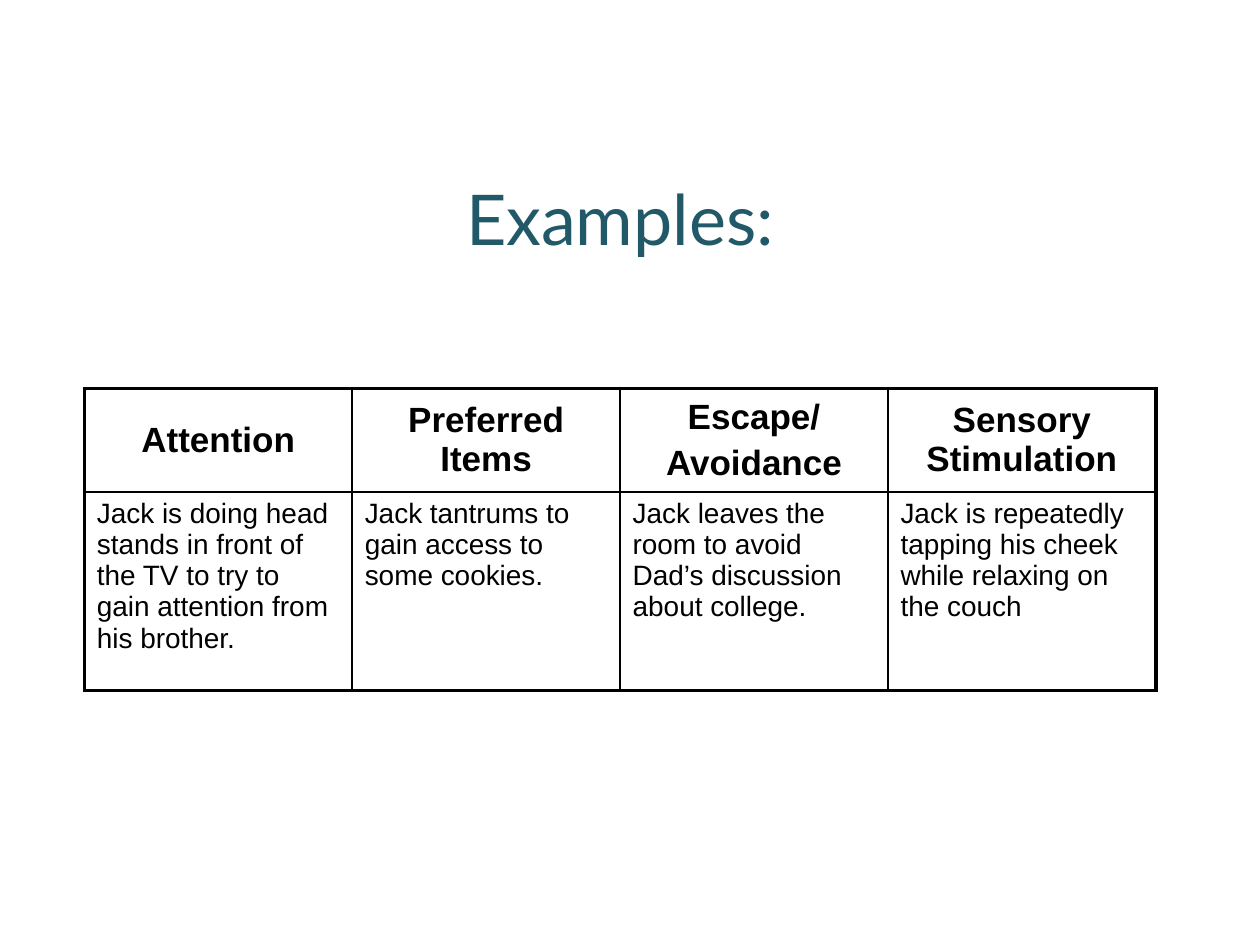
from lxml import etree
from pptx import Presentation
from pptx.dml.color import RGBColor
from pptx.enum.text import MSO_ANCHOR as ANCHOR, PP_ALIGN as ALIGN
from pptx.oxml.ns import qn
from pptx.util import Cm, Pt

INK = "000000"
TEAL = "215968"
THICK, THIN = 2.25, 1
HEADER_HEIGHT, BODY_HEIGHT = 1.95, 4
EXAMPLES = [
    ("Attention", "Jack is doing head stands in front of the TV to try to gain attention from his brother."),
    ("Preferred Items", "Jack tantrums to gain access to some cookies."),
    ("Escape/\nAvoidance", "Jack leaves the room to avoid Dad’s discussion about college."),
    ("Sensory Stimulation", "Jack is repeatedly tapping his cheek while relaxing on the couch"),
]


def color(value):
    return RGBColor.from_string(value)


def write(tf, text, size=16, font="Arial", fill=INK, bold=False, align=ALIGN.LEFT, gap=0):
    tf.word_wrap = True
    for i, line in enumerate(text.split("\n")):
        p = tf.paragraphs[0] if i == 0 else tf.add_paragraph()
        p.alignment = align
        if i:
            p.space_before = Pt(gap)
        r = p.add_run()
        r.text = line
        r.font.name = font
        r.font.size = Pt(size)
        r.font.bold = bold
        r.font.color.rgb = color(fill)


def set_borders(cell, widths):
    props = cell._tc.get_or_add_tcPr()
    for i, (side, width) in enumerate(zip("LRTB", widths)):
        ln = etree.Element(qn(f"a:ln{side}"), w=str(Pt(width)))
        solid = etree.SubElement(ln, qn("a:solidFill"))
        etree.SubElement(solid, qn("a:srgbClr"), val=INK)
        props.insert(i, ln)


def add_title(s, left, top, width, height):
    tf = s.shapes.add_textbox(Cm(left), Cm(top), Cm(width), Cm(height)).text_frame
    tf.vertical_anchor = ANCHOR.MIDDLE
    write(tf, "Examples:", size=40, font="Lato", fill=TEAL, align=ALIGN.CENTER)


def add_examples(s, left, top, width):
    count = len(EXAMPLES)
    height = HEADER_HEIGHT + BODY_HEIGHT
    table = s.shapes.add_table(2, count, Cm(left), Cm(top), Cm(width), Cm(height)).table
    table.horz_banding = False
    table.rows[0].height = Cm(HEADER_HEIGHT)
    table.rows[1].height = Cm(BODY_HEIGHT)
    for col, texts in enumerate(EXAMPLES):
        table.columns[col].width = Cm(width / count)
        for row, text in enumerate(texts):
            cell = table.cell(row, col)
            header = row == 0
            cell.fill.background()
            outer = (col == 0, col == count - 1, header, not header)
            set_borders(cell, [THICK if edge else THIN for edge in outer])
            if header:
                cell.vertical_anchor = ANCHOR.MIDDLE
                write(cell.text_frame, text, size=20, bold=True, align=ALIGN.CENTER, gap=4)
            else:
                write(cell.text_frame, text)


def main():
    prs = Presentation()
    prs.slide_width, prs.slide_height = Cm(25.4), Cm(19.05)
    s = prs.slides.add_slide(prs.slide_layouts[6])
    add_title(s, 1.7, 2.33, 21.6, 4.1)
    add_examples(s, 1.7, 7.83, 21.6)
    prs.save("out.pptx")


if __name__ == "__main__":
    main()
